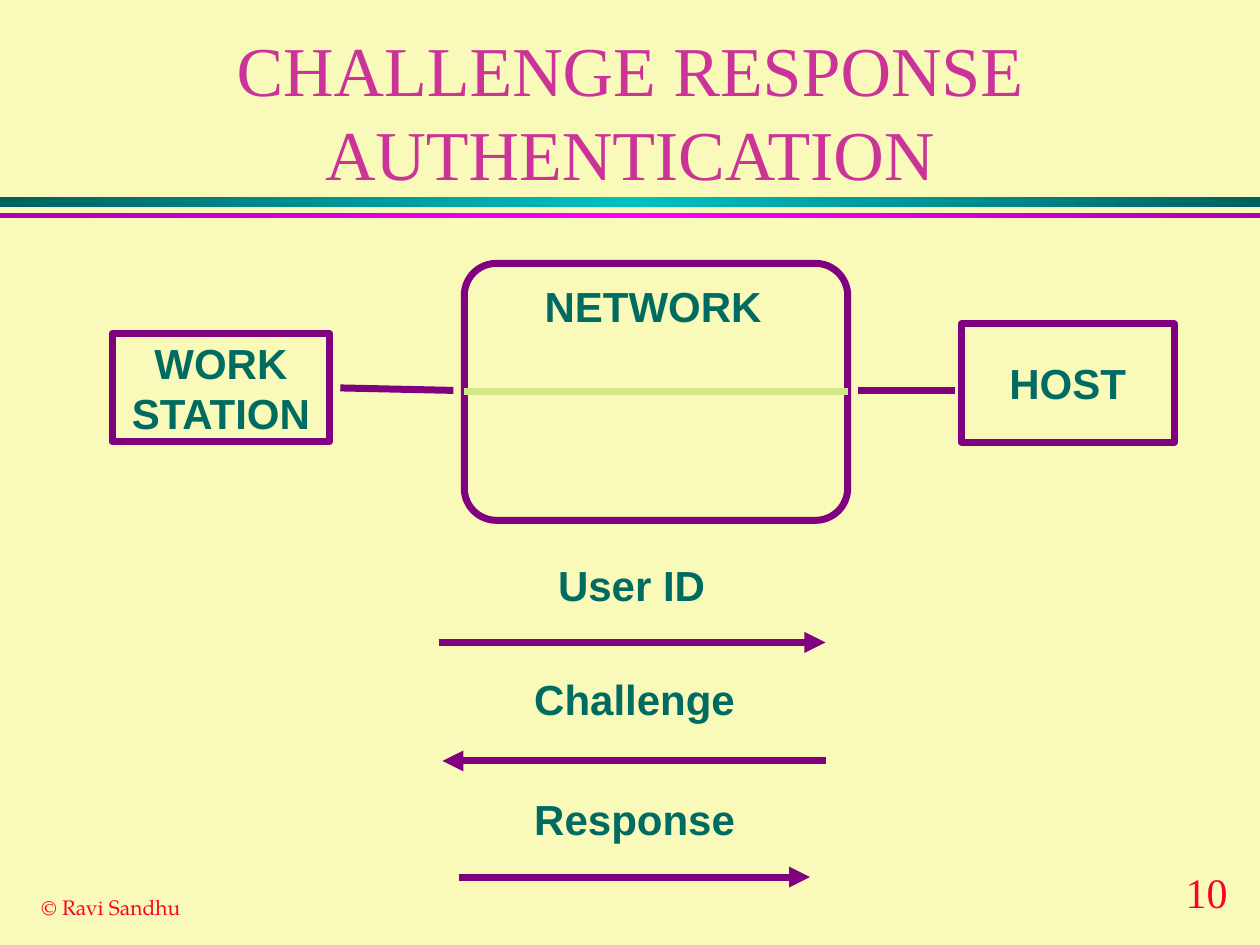
import copy

import pptx
import pptx.dml.color
import pptx.enum.shapes
import pptx.enum.text
import pptx.oxml.ns
import pptx.util
from lxml import etree
from pptx.util import Cm

RGBColor = pptx.dml.color.RGBColor
MSO_SHAPE = pptx.enum.shapes.MSO_SHAPE
PP_ALIGN = pptx.enum.text.PP_ALIGN
MSO_ANCHOR = pptx.enum.text.MSO_ANCHOR
qn = pptx.oxml.ns.qn

CREAM = RGBColor(0xF9, 0xF9, 0xB9)
PINK = RGBColor(0xCC, 0x33, 0x99)
RED = RGBColor(0xFC, 0x01, 0x28)
PURPLE = RGBColor(0x80, 0x00, 0x80)
GREEN = RGBColor(0x00, 0x6B, 0x61)
LIGHT_GREEN = RGBColor(0xD4, 0xE6, 0x86)
DARK_TEAL = RGBColor(0x00, 0x60, 0x60)
TEAL = RGBColor(0x00, 0xC0, 0xC0)
DARK_MAGENTA = RGBColor(0xB0, 0x00, 0xB0)
MAGENTA = RGBColor(0xFF, 0x00, 0xFF)


def write_text(shape, lines, size, font, color, bold=False, align=PP_ALIGN.CENTER,
               anchor=MSO_ANCHOR.MIDDLE, wrap=False, spacing=None):
    frame = shape.text_frame
    frame.word_wrap = wrap
    frame.vertical_anchor = anchor
    for index, line in enumerate(lines):
        paragraph = frame.add_paragraph() if index else frame.paragraphs[0]
        paragraph.alignment = align
        paragraph.line_spacing = spacing
        run = paragraph.add_run()
        run.text = line
        run.font.size = pptx.util.Pt(size)
        run.font.name = font
        run.font.bold = bold
        run.font.color.rgb = color


def draw_line(start_x, start_y, end_x, end_y, color=PURPLE, arrow=False):
    line = slide.shapes.add_connector(
        pptx.enum.shapes.MSO_CONNECTOR.STRAIGHT,
        Cm(start_x), Cm(start_y), Cm(end_x), Cm(end_y))
    line.line.color.rgb = color
    line.line.width = pptx.util.Pt(4)
    if arrow:
        etree.SubElement(line.line._get_or_add_ln(), qn("a:tailEnd"), type="triangle")
    etree.SubElement(line._element.spPr, qn("a:effectLst"))
    return line


presentation = pptx.Presentation()
presentation.slide_width = Cm(25.4)
presentation.slide_height = Cm(19.05)
slide = presentation.slides.add_slide(presentation.slide_layouts[6])
slide.background.fill.solid()
slide.background.fill.fore_color.rgb = CREAM

# Two bars under the title, each dark at the ends and bright in the middle
for top, height, edge, center in [(3.97, 0.2, DARK_TEAL, TEAL),
                                  (4.29, 0.1, DARK_MAGENTA, MAGENTA)]:
    bar = slide.shapes.add_shape(MSO_SHAPE.RECTANGLE, 0, Cm(top), Cm(25.4), Cm(height))
    bar.shadow.inherit = False
    bar.line.fill.background()
    bar.fill.gradient()
    bar.fill.gradient_angle = 0
    stop_list = bar._element.spPr.find(".//" + qn("a:gsLst"))
    stop_list.append(copy.deepcopy(stop_list[0]))
    for stop, position, color in zip(bar.fill.gradient_stops, (0, 0.5, 1),
                                     (edge, center, edge)):
        stop.position = position
        stop.color.rgb = color

# Title and footer
title = slide.shapes.add_textbox(Cm(1.9), Cm(0.64), Cm(21.6), Cm(3.18))
write_text(title, ["CHALLENGE RESPONSE AUTHENTICATION"], 40, "Times New Roman", PINK,
           wrap=True)
for text, left, top, width, height, size, font in [
        ("10", 23.65, 17.35, 1.5, 1.27, 24, "Times New Roman"),
        ("© Ravi Sandhu", 0.58, 17.91, 3.33, 0.76, 12, "TeX Gyre Pagella")]:
    footer = slide.shapes.add_textbox(Cm(left), Cm(top), Cm(width), Cm(height))
    write_text(footer, [text], size, font, RED, align=PP_ALIGN.LEFT,
               anchor=MSO_ANCHOR.TOP)

# Work station, host and the network between them
for kind, lines, left, top, width, height in [
        (MSO_SHAPE.RECTANGLE, ["HOST"], 19.38, 6.53, 4.29, 2.39),
        (MSO_SHAPE.RECTANGLE, ["WORK", "STATION"], 2.26, 6.73, 4.39, 2.18),
        (MSO_SHAPE.ROUNDED_RECTANGLE, [], 9.36, 5.31, 7.73, 5.18)]:
    node = slide.shapes.add_shape(kind, Cm(left), Cm(top), Cm(width), Cm(height))
    node.shadow.inherit = False
    node.fill.background()
    node.line.color.rgb = PURPLE
    node.line.width = pptx.util.Pt(4)
    write_text(node, lines, 24, "Arial", GREEN, bold=True)
network = node
network.adjustments[0] = 0.125

draw_line(6.86, 7.82, 9.14, 7.87)
network_line = draw_line(9.36, 7.87, 17.09, 7.87, LIGHT_GREEN)
network_line.begin_connect(network, 1)
network_line.end_connect(network, 3)
draw_line(17.3, 7.87, 19.25, 7.87)

# Messages exchanged
for start_x, end_x, y in [(8.84, 16.64, 12.95), (16.66, 8.92, 15.34), (9.25, 16.33, 17.68)]:
    draw_line(start_x, y, end_x, y, arrow=True)

for text, left, top, width in [("NETWORK", 10.8, 5.72, 4.75), ("User ID", 11.07, 11.33, 3.35),
                               ("Challenge", 10.59, 13.64, 4.42),
                               ("Response", 10.59, 16.05, 4.42)]:
    label = slide.shapes.add_textbox(Cm(left), Cm(top), Cm(width), Cm(1.07))
    write_text(label, [text], 24, "Arial", GREEN, bold=True, align=PP_ALIGN.LEFT,
               anchor=MSO_ANCHOR.TOP, spacing=0.87)
    frame = label.text_frame
    frame.margin_left = frame.margin_right = Cm(0.18)
    frame.margin_top = frame.margin_bottom = Cm(0.08)

presentation.save("out.pptx")
